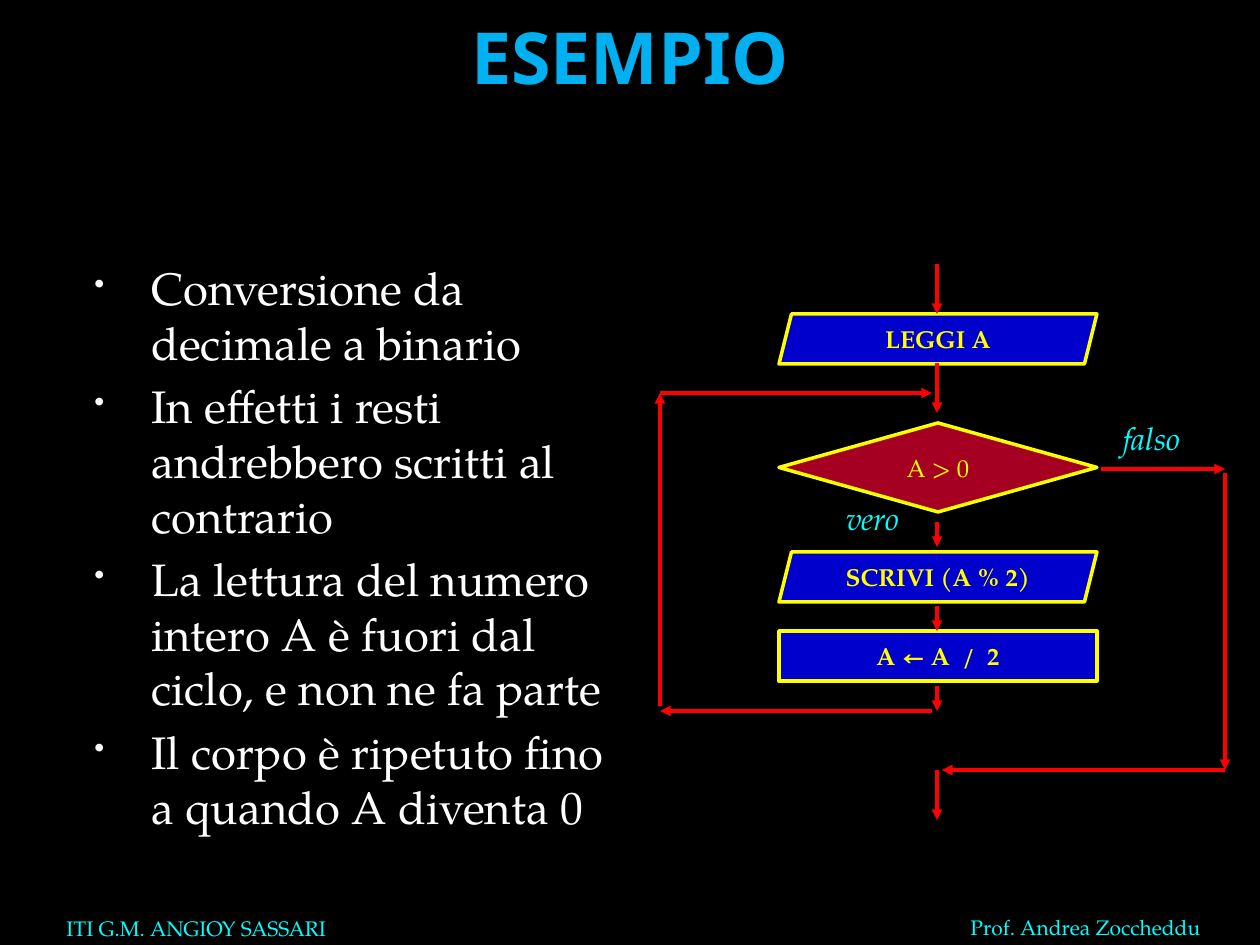
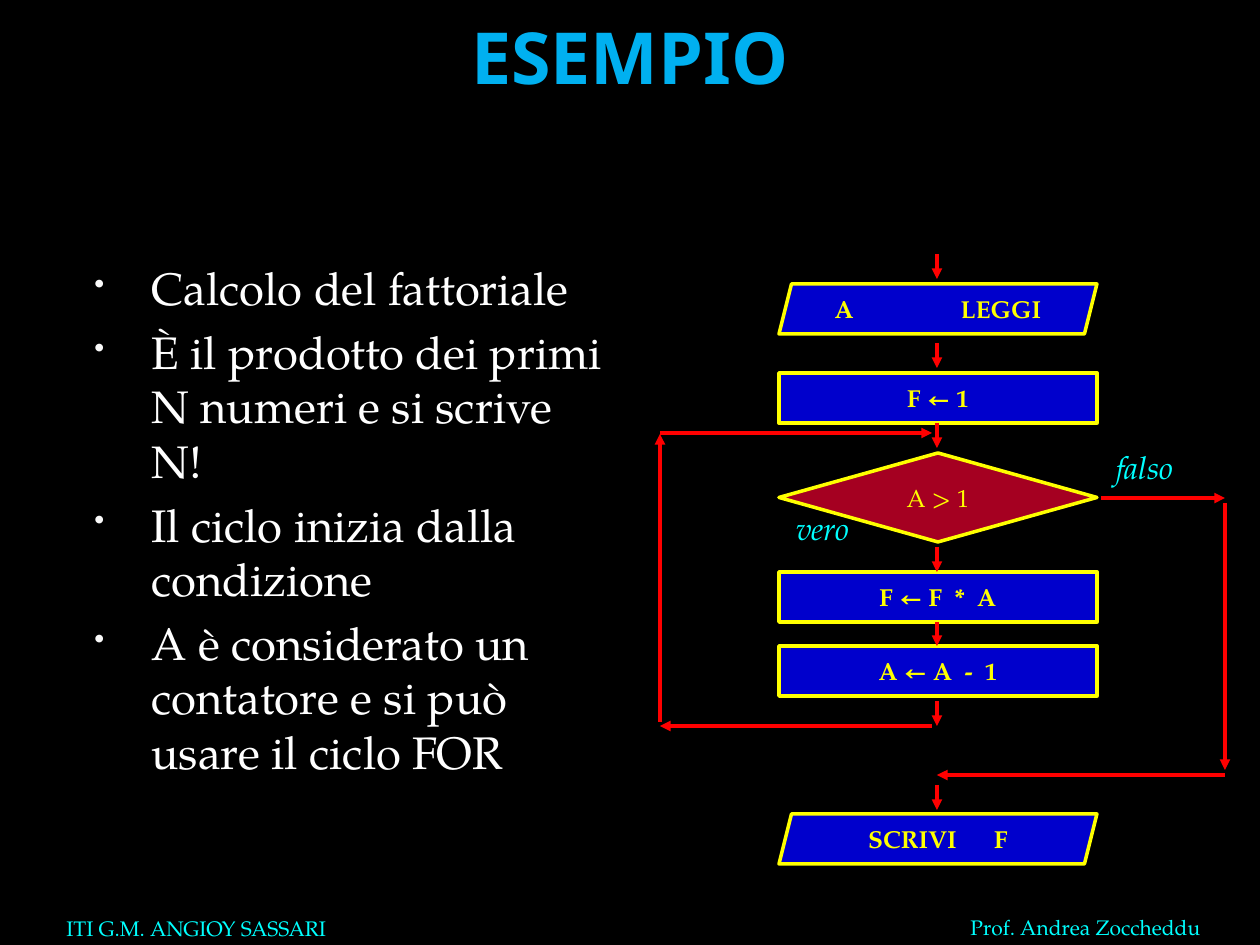
import dataclasses

import lxml.etree
import pptx
import pptx.dml.color
import pptx.enum.shapes
import pptx.enum.text
import pptx.oxml.ns
import pptx.util

RGBColor = pptx.dml.color.RGBColor
Shape = pptx.enum.shapes.MSO_SHAPE
Anchor = pptx.enum.text.MSO_ANCHOR
Align = pptx.enum.text.PP_ALIGN

BLACK = RGBColor(0x00, 0x00, 0x00)
WHITE = RGBColor(0xFF, 0xFF, 0xFF)
SKY = RGBColor(0x00, 0xB0, 0xF0)
CYAN = RGBColor(0x00, 0xFF, 0xFF)
RED = RGBColor(0xFF, 0x00, 0x00)
YELLOW = RGBColor(0xFF, 0xFF, 0x00)
BLUE = RGBColor(0x00, 0x00, 0xCC)
CRIMSON = RGBColor(0xA5, 0x00, 0x21)
BULLET_GREY = RGBColor(0xF9, 0xF9, 0xF9)

TITLE_FONT = "Noto Sans"
TEXT_FONT = "TeX Gyre Pagella"
PX_PER_INCH = 126
TITLE_ONLY = 5

STEP_LEFT, STEP_WIDTH, STEP_HEIGHT, DIAMOND_HEIGHT = 779, 318, 50, 89
AXIS_X, JUNCTION_X = 937, 932
LOOP_X, BRANCH_X, EXIT_X = 660, 1101, 1225


@dataclasses.dataclass
class Flowchart:
    """Steps of a while loop and the heights of its arrows."""

    steps: list
    condition: tuple
    true_label: tuple
    false_label: tuple
    down_arrows: list
    loop_bottom: int
    loop_rise: tuple
    loop_top: int
    exit_top: int
    exit_drop: tuple
    exit_bottom: int
    exit_end_x: int


BINARY_POINTS = [
    "Conversione da decimale a binario",
    "In effetti i resti andrebbero scritti al contrario",
    "La lettura del numero intero A è fuori dal ciclo, e non ne fa parte",
    "Il corpo è ripetuto fino a quando A diventa 0",
]
BINARY_CHART = Flowchart(
    steps=[
        (Shape.PARALLELOGRAM, 314, "LEGGI A"),
        (Shape.PARALLELOGRAM, 552, "SCRIVI (A % 2)"),
        (Shape.FLOWCHART_PROCESS, 631, "A ← A  /  2"),
    ],
    condition=(423, "A > 0"),
    true_label=(829, 493),
    false_label=(1108, 413),
    down_arrows=[(264, 314), (363, 413), (522, 547), (606, 631), (686, 711), (770, 820)],
    loop_bottom=711,
    loop_rise=(706, 393),
    loop_top=393,
    exit_top=469,
    exit_drop=(473, 770),
    exit_bottom=770,
    exit_end_x=942,
)

FACTORIAL_POINTS = [
    "Calcolo del fattoriale",
    "È il prodotto dei primi N numeri e si scrive N!",
    "Il ciclo inizia dalla condizione",
    "A è considerato un contatore e si può usare il ciclo FOR",
]
FACTORIAL_CHART = Flowchart(
    steps=[
        (Shape.PARALLELOGRAM, 284, "A \tLEGGI"),
        (Shape.FLOWCHART_PROCESS, 373, "F ← 1"),
        (Shape.FLOWCHART_PROCESS, 572, "F ← F  *  A"),
        (Shape.FLOWCHART_PROCESS, 646, "A ← A  -  1"),
        (Shape.PARALLELOGRAM, 814, "SCRIVI \tF"),
    ],
    condition=(453, "A > 1"),
    true_label=(779, 503),
    false_label=(1101, 442),
    down_arrows=[(254, 279), (343, 368), (423, 448), (547, 572),
                 (622, 646), (701, 726), (785, 810)],
    loop_bottom=726,
    loop_rise=(722, 434),
    loop_top=433,
    exit_top=498,
    exit_drop=(503, 770),
    exit_bottom=775,
    exit_end_x=AXIS_X,
)


def px(*lengths):
    """Turn lengths in px into EMU."""
    return [pptx.util.Emu(round(length * 914400 / PX_PER_INCH)) for length in lengths]


def add_element(parent, tag, **attributes):
    """Append a DrawingML element to a parent element."""
    return lxml.etree.SubElement(parent, pptx.oxml.ns.qn(tag), attributes)


def add_run(paragraph, text, size, color, font=TEXT_FONT, bold=False, italic=False):
    """Add one formatted run to a paragraph."""
    run = paragraph.add_run()
    run.text = text
    run.font.name = font
    run.font.size = pptx.util.Pt(size)
    run.font.color.rgb = color
    run.font.bold = bold
    run.font.italic = italic


def center_text(shape, text, size, color, **style):
    """Write one centred line without insets in a shape."""
    frame = shape.text_frame
    frame.word_wrap = False
    frame.vertical_anchor = Anchor.MIDDLE
    frame.margin_left = frame.margin_right = frame.margin_top = frame.margin_bottom = 0
    paragraph = frame.paragraphs[0]
    paragraph.alignment = Align.CENTER
    if "\t" in text:
        tabs = add_element(paragraph._p.get_or_add_pPr(), "a:tabLst")
        add_element(tabs, "a:tab", pos=str(px(PX_PER_INCH)[0]), algn="l")
    add_run(paragraph, text, size, color, **style)


def add_title(slide, text):
    """Place and format the title placeholder."""
    title = slide.shapes.title
    title.left, title.top, title.width, title.height = px(63, 6, 1134, 158)
    frame = title.text_frame
    frame.auto_size = pptx.enum.text.MSO_AUTO_SIZE.NONE
    frame.vertical_anchor = Anchor.TOP
    frame.paragraphs[0].alignment = Align.CENTER
    add_run(frame.paragraphs[0], text, 41, SKY, font=TITLE_FONT, bold=True)


def add_footer(slide, text, box, anchor, wrap):
    """Add one footer text."""
    frame = slide.shapes.add_textbox(*px(*box)).text_frame
    frame.word_wrap = wrap
    frame.vertical_anchor = anchor
    add_run(frame.paragraphs[0], text, 12, CYAN)


def add_bullets(slide, points):
    """Add the bulleted list on the left."""
    frame = slide.shapes.add_textbox(*px(63, 254, 557, 624)).text_frame
    frame.word_wrap = True
    for index, point in enumerate(points):
        paragraph = frame.add_paragraph() if index else frame.paragraphs[0]
        properties = paragraph._p.get_or_add_pPr()
        margin, indent = px(76, -57)
        properties.set("marL", str(margin))
        properties.set("indent", str(indent))
        bullet_color = add_element(properties, "a:buClr")
        add_element(bullet_color, "a:srgbClr", val=str(BULLET_GREY))
        add_element(properties, "a:buSzPct", val="65000")
        add_element(properties, "a:buChar", char="•")
        if index:
            paragraph.space_before = pptx.util.Pt(5.2)
        add_run(paragraph, point, 26, WHITE)


def add_step(slide, kind, top, height, text, fill, bold):
    """Add one outlined flowchart block on the axis."""
    shape = slide.shapes.add_shape(kind, *px(STEP_LEFT, top, STEP_WIDTH, height))
    shape.shadow.inherit = False
    shape.fill.solid()
    shape.fill.fore_color.rgb = fill
    shape.line.color.rgb = YELLOW
    shape.line.width = pptx.util.Pt(2)
    center_text(shape, text, 14, YELLOW, bold=bold)


def add_arrow(slide, start_x, start_y, end_x, end_y):
    """Add a straight red arrow."""
    arrow = slide.shapes.add_connector(
        pptx.enum.shapes.MSO_CONNECTOR.STRAIGHT, *px(start_x, start_y, end_x, end_y))
    arrow.line.color.rgb = RED
    arrow.line.width = pptx.util.Pt(2)
    add_element(arrow.line._get_or_add_ln(), "a:tailEnd", type="triangle")
    add_element(arrow._element.spPr, "a:effectLst")


def add_branch_label(slide, text, left, top):
    """Add the italic name of a branch."""
    label = slide.shapes.add_textbox(*px(left, top, 88, 50))
    center_text(label, text, 18, CYAN, italic=True)


def add_flowchart(slide, chart):
    """Draw the blocks, arrows and branch labels of a loop."""
    for kind, top, text in chart.steps:
        add_step(slide, kind, top, STEP_HEIGHT, text, BLUE, True)
    top, text = chart.condition
    add_step(slide, Shape.DIAMOND, top, DIAMOND_HEIGHT, text, CRIMSON, False)
    for start, end in chart.down_arrows:
        add_arrow(slide, AXIS_X, start, AXIS_X, end)
    rise_start, rise_end = chart.loop_rise
    add_arrow(slide, JUNCTION_X, chart.loop_bottom, LOOP_X, chart.loop_bottom)
    add_arrow(slide, LOOP_X, rise_start, LOOP_X, rise_end)
    add_arrow(slide, LOOP_X, chart.loop_top, JUNCTION_X, chart.loop_top)
    drop_start, drop_end = chart.exit_drop
    add_arrow(slide, BRANCH_X, chart.exit_top, EXIT_X, chart.exit_top)
    add_arrow(slide, EXIT_X, drop_start, EXIT_X, drop_end)
    add_arrow(slide, EXIT_X, chart.exit_bottom, chart.exit_end_x, chart.exit_bottom)
    add_branch_label(slide, "vero", *chart.true_label)
    add_branch_label(slide, "falso", *chart.false_label)


def add_example(presentation, points, chart):
    """Add one example slide with its list and flowchart."""
    slide = presentation.slides.add_slide(presentation.slide_layouts[TITLE_ONLY])
    add_footer(slide, "Prof. Andrea Zoccheddu", (958, 908, 258, 38), Anchor.TOP, False)
    add_footer(slide, "ITI G.M. ANGIOY SASSARI", (54, 897, 399, 50), Anchor.BOTTOM, True)
    add_title(slide, "ESEMPIO")
    add_bullets(slide, points)
    add_flowchart(slide, chart)


def main():
    """Build and save the presentation."""
    presentation = pptx.Presentation()
    presentation.slide_width, presentation.slide_height = px(1260, 945)
    background = presentation.slide_master.background.fill
    background.solid()
    background.fore_color.rgb = BLACK
    add_example(presentation, BINARY_POINTS, BINARY_CHART)
    add_example(presentation, FACTORIAL_POINTS, FACTORIAL_CHART)
    presentation.save("out.pptx")


if __name__ == "__main__":
    main()
